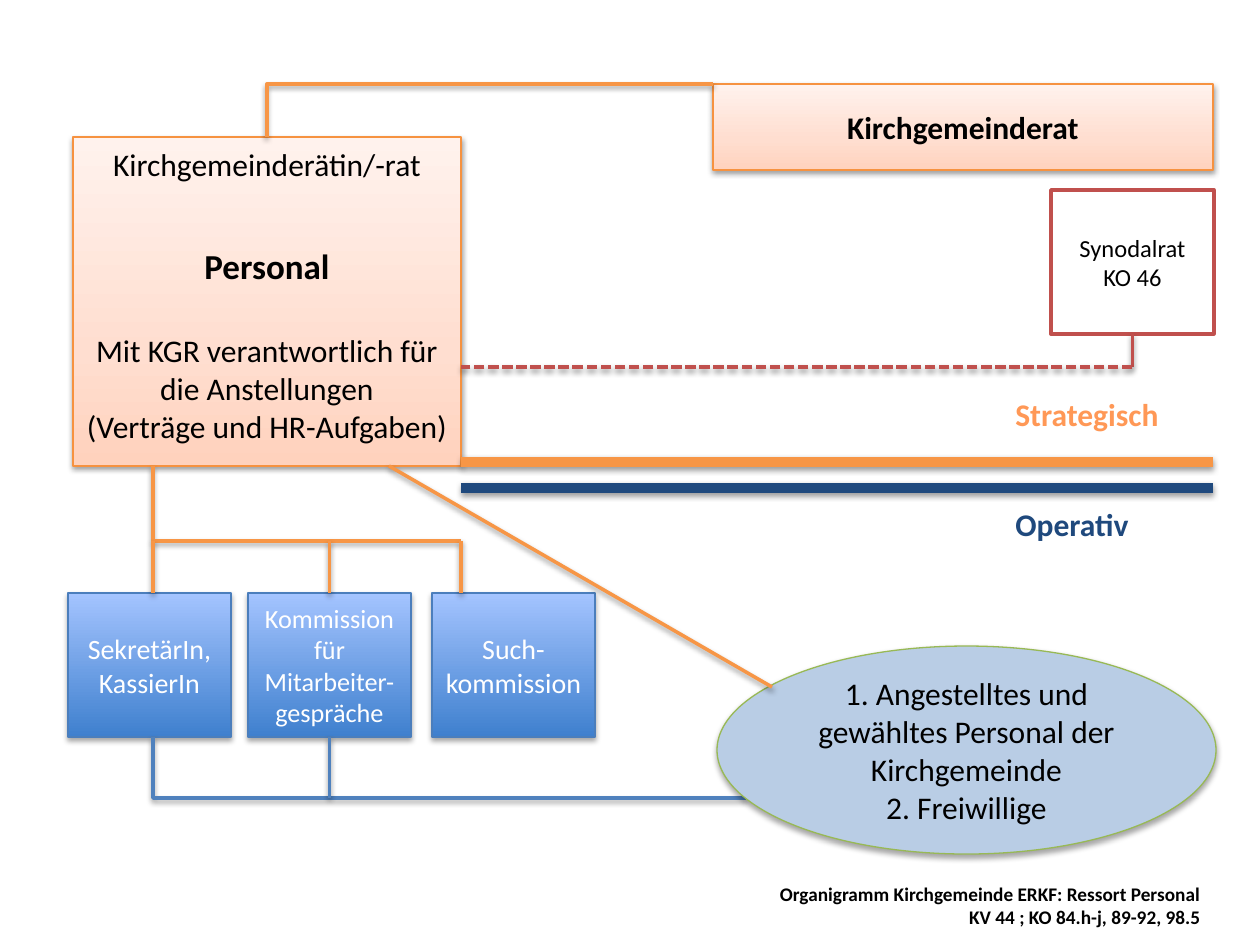
from copy import deepcopy

from lxml import etree
from pptx import Presentation
from pptx import util as u
from pptx.dml.color import RGBColor
from pptx.enum import dml, shapes, text
from pptx.oxml.ns import qn

PX = 914400 / 126

BLACK = RGBColor(0x00, 0x00, 0x00)
WHITE = RGBColor(0xFF, 0xFF, 0xFF)
ORANGE = RGBColor(0xF7, 0x96, 0x46)
ORANGE_EDGE = RGBColor(0xF6, 0x92, 0x40)
ORANGE_TEXT = RGBColor(0xFF, 0x98, 0x56)
NAVY = RGBColor(0x1F, 0x49, 0x7D)
BLUE = RGBColor(0x4F, 0x81, 0xBD)
BLUE_EDGE = RGBColor(0x4B, 0x7E, 0xBC)
PALE_BLUE = RGBColor(0xB9, 0xCD, 0xE5)
GREEN_EDGE = RGBColor(0x98, 0xB9, 0x55)
RED = RGBColor(0xC0, 0x50, 0x4D)

# Gradients run from bottom to top: (position, colour)
PEACH = [(0, RGBColor(0xFF, 0xD2, 0xBD)), (35, RGBColor(0xFF, 0xDE, 0xD0)),
         (100, RGBColor(0xFF, 0xF2, 0xED))]
SKY = [(0, RGBColor(0x3F, 0x80, 0xCE)), (100, RGBColor(0xA4, 0xC4, 0xFF))]

# Shadow: opacity in percent, distance in EMU
SOFT = (38, 20000)
DEEP = (35, 23000)

RECT = shapes.MSO_SHAPE.RECTANGLE


def px(*lengths):
    return [u.Emu(round(n * PX)) for n in lengths]


def add_shadow(effects, opacity, distance):
    outer = etree.SubElement(effects, qn("a:outerShdw"), blurRad="40000", dist=str(distance),
                             dir="5400000", rotWithShape="0")
    colour = etree.SubElement(outer, qn("a:srgbClr"), val="000000")
    etree.SubElement(colour, qn("a:alpha"), val=str(opacity * 1000))


def fill_gradient(shape, stops):
    shape.fill.gradient()
    shape.fill.gradient_angle = 90
    stop_list = shape._element.spPr.find(".//" + qn("a:gsLst"))
    while len(stop_list) < len(stops):
        stop_list.append(deepcopy(stop_list[0]))
    for stop, (position, colour) in zip(shape.fill.gradient_stops, stops):
        stop.position = position / 100
        stop.color.rgb = colour


def write(frame, words, size, colour, bold=False, align=text.PP_ALIGN.CENTER):
    frame.word_wrap = True
    frame.text = words
    for paragraph in frame.paragraphs:
        paragraph.alignment = align
        for run in paragraph.runs:
            run.font.name = "Calibri"
            run.font.size = u.Pt(size)
            run.font.bold = bold
            run.font.color.rgb = colour


def add_box(slide, box, fill, edge, weight=0.75, shadow=None, kind=RECT):
    shape = slide.shapes.add_shape(kind, *px(*box))
    if isinstance(fill, list):
        fill_gradient(shape, fill)
    else:
        shape.fill.solid()
        shape.fill.fore_color.rgb = fill
    shape.line.color.rgb = edge
    shape.line.width = u.Pt(weight)
    shape.shadow.inherit = False
    if shadow:
        add_shadow(shape._element.spPr.find(qn("a:effectLst")), *shadow)
    shape.text_frame.vertical_anchor = text.MSO_ANCHOR.MIDDLE
    return shape


def add_label(slide, box, words, size, colour=BLACK, **style):
    frame = slide.shapes.add_textbox(*px(*box)).text_frame
    write(frame, words, size, colour, **style)
    frame.auto_size = text.MSO_AUTO_SIZE.SHAPE_TO_FIT_TEXT


def add_line(slide, start, end, colour, weight=2, bent=False, dashed=False):
    kind = shapes.MSO_CONNECTOR.ELBOW if bent else shapes.MSO_CONNECTOR.STRAIGHT
    line = slide.shapes.add_connector(kind, *px(*start, *end))
    line.line.color.rgb = colour
    line.line.width = u.Pt(weight)
    if dashed:
        line.line.dash_style = dml.MSO_LINE.SQUARE_DOT
    properties = line._element.spPr
    if bent:  # turn straight at the start: vertical first, then horizontal
        guides = properties.find(".//" + qn("a:avLst"))
        etree.SubElement(guides, qn("a:gd"), name="adj1", fmla="val 0")
    add_shadow(etree.SubElement(properties, qn("a:effectLst")), *SOFT)
    return line


def add_department(slide, x, y, w, h):
    box = add_box(slide, (x, y, w, h), PEACH, ORANGE_EDGE, shadow=SOFT,
                  kind=shapes.MSO_SHAPE.FLOWCHART_PROCESS)
    add_label(slide, (x, y + 2, w, 50), "Kirchgemeinderätin/-rat", 18)
    add_label(slide, (x, y + 101, w, 55), "Personal", 20, bold=True)
    add_label(slide, (x, y + 188, w, 127),
              "Mit KGR verantwortlich für die Anstellungen\v(Verträge und HR-Aufgaben)", 18)
    return box


def add_council(slide, x, y, w, h):
    add_box(slide, (x, y, w, h), PEACH, ORANGE_EDGE, shadow=SOFT)
    add_label(slide, (x, y + 18, w, 50), "Kirchgemeinderat", 18, bold=True)


def add_synod(slide, x, y, w, h):
    box = add_box(slide, (x, y, w, h), WHITE, RED, weight=2)
    write(box.text_frame, "Synodalrat\nKO 46", 14, BLACK)
    middle, turn = x + w / 2, y + h + 33
    add_line(slide, (middle, y + h), (middle, turn), RED).begin_connect(box, 2)
    add_line(slide, (middle, turn), (461, turn), RED, dashed=True)


def add_levels(slide, x, y, w):
    left = text.PP_ALIGN.LEFT
    add_line(slide, (x, y), (x + w, y), ORANGE, weight=6)
    add_line(slide, (x, y + 26), (x + w, y + 26), NAVY, weight=6)
    add_label(slide, (x + 542, y - 73, 204, 50), "Strategisch", 18, ORANGE_TEXT,
              bold=True, align=left)
    add_label(slide, (x + 542, y + 37, 212, 50), "Operativ", 18, NAVY, bold=True, align=left)


def add_units(slide, x, y, w, h):
    units = [(0, "SekretärIn, KassierIn", 16),
             (180, "Kommission für Mitarbeiter-gespräche", 15),
             (364, "Such-kommission", 16)]
    boxes = []
    for offset, words, size in units:
        box = add_box(slide, (x + offset, y, w, h), SKY, BLUE_EDGE, shadow=DEEP)
        write(box.text_frame, words, size, WHITE)
        boxes.append(box)
    commission = boxes[1]

    # Branches from the department above
    first, middle, last = x + 85, x + 180 + w / 2, x + 393
    branch = y - 52
    add_line(slide, (first, y - 127), (last, branch), ORANGE, bent=True)
    for drop in (first, last):
        add_line(slide, (drop, branch), (drop, y), ORANGE)
    add_line(slide, (middle, branch), (middle, y), ORANGE).end_connect(commission, 0)

    # Links to the staff below
    base = y + h + 61
    add_line(slide, (first, y + h), (x + 678, base), BLUE, bent=True)
    add_line(slide, (middle, y + h), (middle, base), BLUE).begin_connect(commission, 2)


def add_staff(slide, x, y, w, h):
    oval = add_box(slide, (x, y, w, h), PALE_BLUE, GREEN_EDGE, shadow=DEEP,
                   kind=shapes.MSO_SHAPE.OVAL)
    write(oval.text_frame,
          "1. Angestelltes und gewähltes Personal der Kirchgemeinde\n2. Freiwillige", 18, BLACK)
    add_line(slide, (389, 466), (x + 55, y + 41), ORANGE)


def main():
    deck = Presentation()
    deck.slide_width, deck.slide_height = px(1260, 945)
    slide = deck.slides.add_slide(deck.slide_layouts[6])

    department = add_department(slide, 73, 137, 388, 329)
    add_levels(slide, 461, 462, 752)
    add_units(slide, 68, 593, 163, 144)
    add_staff(slide, 717, 646, 499, 208)
    add_council(slide, 713, 84, 500, 86)
    add_line(slide, (267, 137), (713, 84), ORANGE, bent=True).begin_connect(department, 0)
    add_synod(slide, 1051, 190, 163, 144)

    # Footer
    add_label(slide, (291, 876, 922, 59),
              "Organigramm Kirchgemeinde ERKF: Ressort Personal\nKV 44 ; KO 84.h-j, 89-92, 98.5",
              11, bold=True, align=text.PP_ALIGN.RIGHT)

    deck.save("out.pptx")


if __name__ == "__main__":
    main()
